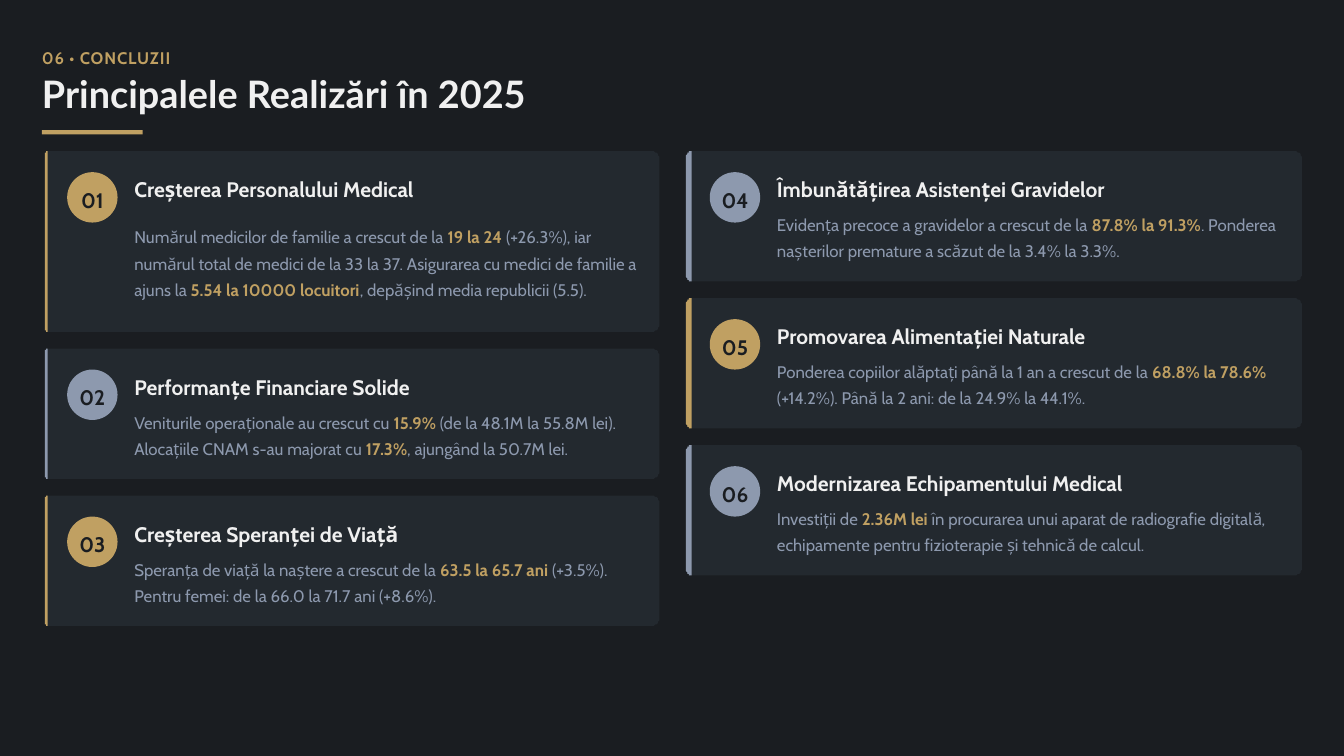
from dataclasses import dataclass
from math import cos, radians, sin

from lxml.etree import SubElement
from pptx import Presentation
from pptx.dml.color import RGBColor
from pptx.enum.shapes import MSO_SHAPE as Preset
from pptx.enum.text import MSO_ANCHOR as Anchor, PP_ALIGN as Align
from pptx.oxml.ns import qn
from pptx.shapes.autoshape import Shape
from pptx.slide import Slide
from pptx.text.text import TextFrame
from pptx.util import Pt

COLORS = {
    "background": "1A1D21",
    "panel": "4A5C6A",
    "gold": "C0A062",
    "steel": "8D99AE",
    "white": "F0F0F0",
}
COLUMN_LEFTS = (31.5, 490.5)
COLUMN_TOP = 108
CARD_WIDTH = 439.5
CARD_GAP = 12
BAR_WIDTH = 3
CIRCLE_SIZE = 36
PADDING_TOP = 15
TEXT_LEFT = 64.5
BODY_TOP = 42


@dataclass(frozen=True)
class Box:
    left: float
    top: float
    width: float
    height: float


@dataclass(frozen=True)
class Style:
    size: float
    color: str
    font: str = "Cabin"
    bold: bool = True
    tracking: float = 0


@dataclass(frozen=True)
class Card:
    heading: str
    accent: str
    body: tuple[str, ...]
    height: float = 93


LABEL = Style(12, "gold", tracking=0.6)
TITLE = Style(27, "white", font="Lato")
NUMBER = Style(15, "background")
HEADING = Style(15, "white")
BODY = Style(12, "steel", bold=False)
HIGHLIGHT = Style(12, "gold")

COLUMNS = (
    (
        Card("Creșterea Personalului Medical", "gold", (
            "Numărul medicilor de familie a crescut de la ", "19 la 24",
            " (+26.3%), iar numărul total de medici de la 33 la 37. "
            "Asigurarea cu medici de familie a ajuns la ",
            "5.54 la 10000 locuitori", ", depășind media republicii (5.5)."), 129),
        Card("Performanțe Financiare Solide", "steel", (
            "Veniturile operaționale au crescut cu ", "15.9%",
            " (de la 48.1M la 55.8M lei). Alocațiile CNAM s-au majorat cu ",
            "17.3%", ", ajungând la 50.7M lei.")),
        Card("Creșterea Speranței de Viață", "gold", (
            "Speranța de viață la naștere a crescut de la ", "63.5 la 65.7 ani",
            " (+3.5%). Pentru femei: de la 66.0 la 71.7 ani (+8.6%).")),
    ),
    (
        Card("Îmbunătățirea Asistenței Gravidelor", "steel", (
            "Evidența precoce a gravidelor a crescut de la ", "87.8% la 91.3%",
            ". Ponderea nașterilor premature a scăzut de la 3.4% la 3.3%.")),
        Card("Promovarea Alimentației Naturale", "gold", (
            "Ponderea copiilor alăptați până la 1 an a crescut de la ", "68.8% la 78.6%",
            " (+14.2%). Până la 2 ani: de la 24.9% la 44.1%.")),
        Card("Modernizarea Echipamentului Medical", "steel", (
            "Investiții de ", "2.36M lei",
            " în procurarea unui aparat de radiografie digitală, "
            "echipamente pentru fizioterapie și tehnică de calcul.")),
    ),
)


def rgb(name: str) -> RGBColor:
    """Return the named colour."""
    return RGBColor.from_string(COLORS[name])


def place(shape: Shape, box: Box) -> None:
    """Move and size a shape."""
    shape.left, shape.top = Pt(box.left), Pt(box.top)
    shape.width, shape.height = Pt(box.width), Pt(box.height)


def paint(shape: Shape, color: str) -> None:
    """Give a shape a plain fill with no line or shadow."""
    shape.shadow.inherit = False
    shape.fill.solid()
    shape.fill.fore_color.rgb = rgb(color)
    shape.line.fill.background()


def write(frame: TextFrame, spans: list[tuple[str, Style]], spacing: float,
          align: Align = Align.LEFT) -> None:
    """Fill a text frame with one paragraph of styled runs."""
    frame.word_wrap = True
    frame.vertical_anchor = Anchor.MIDDLE
    frame.margin_left = frame.margin_right = frame.margin_top = frame.margin_bottom = 0
    paragraph = frame.paragraphs[0]
    paragraph.alignment = align
    paragraph.line_spacing = spacing
    for text, style in spans:
        run = paragraph.add_run()
        run.text = text
        run.font.name = style.font
        run.font.size = Pt(style.size)
        run.font.bold = style.bold
        run.font.color.rgb = rgb(style.color)
        if style.tracking:
            run._r.get_or_add_rPr().set("spc", str(round(style.tracking * 100)))


def add_text(slide: Slide, box: Box, spans: list[tuple[str, Style]], spacing: float,
             align: Align = Align.LEFT) -> None:
    """Add a text box."""
    shape = slide.shapes.add_textbox(0, 0, 0, 0)
    place(shape, box)
    write(shape.text_frame, spans, spacing, align)


def add_preset(slide: Slide, preset: Preset, box: Box, color: str) -> None:
    """Add a filled preset shape."""
    shape = slide.shapes.add_shape(preset, 0, 0, 0, 0)
    place(shape, box)
    paint(shape, color)


def add_rounded(slide: Slide, box: Box, left_radius: float, right_radius: float,
                color: str) -> Shape:
    """Add a rectangle whose left and right corners differ in radius."""
    right, bottom = box.left + box.width, box.top + box.height
    corners = (
        (box.left + left_radius, box.top + left_radius, left_radius, 180),
        (right - right_radius, box.top + right_radius, right_radius, 270),
        (right - right_radius, bottom - right_radius, right_radius, 0),
        (box.left + left_radius, bottom - left_radius, left_radius, 90),
    )
    points = [
        (x + radius * cos(radians(start + step)), y + radius * sin(radians(start + step)))
        for x, y, radius, start in corners
        for step in (range(0, 91, 10) if radius else (0,))
    ]
    builder = slide.shapes.build_freeform(*points[0], scale=Pt(1))
    builder.add_line_segments(points[1:], close=True)
    shape = builder.convert_to_shape()
    paint(shape, color)
    return shape


def add_card(slide: Slide, card: Card, number: int, left: float, top: float) -> None:
    """Draw one numbered achievement."""
    panel = add_rounded(slide, Box(left, top, CARD_WIDTH, card.height), 3, 6, "panel")
    color = panel.fill._xPr.find(qn("a:solidFill"))[0]
    SubElement(color, qn("a:alpha")).set("val", "20000")
    add_rounded(slide, Box(left, top, BAR_WIDTH, card.height), BAR_WIDTH, 0, card.accent)
    row = top + PADDING_TOP
    add_preset(slide, Preset.OVAL, Box(left + 16.5, row, CIRCLE_SIZE, CIRCLE_SIZE), card.accent)
    add_text(slide, Box(left + 12.75, row, 43.5, CIRCLE_SIZE), [(f"{number:02}", NUMBER)],
             1.2, Align.CENTER)
    add_text(slide, Box(left + TEXT_LEFT, row, 367, 21), [(card.heading, HEADING)], 1.2)
    spans = [(text, HIGHLIGHT if index % 2 else BODY) for index, text in enumerate(card.body)]
    body_height = card.height - BODY_TOP - PADDING_TOP
    add_text(slide, Box(left + TEXT_LEFT, top + BODY_TOP, 366, body_height), spans, 1.3)


def main() -> None:
    """Build the conclusions slide."""
    presentation = Presentation()
    presentation.slide_width, presentation.slide_height = Pt(960), Pt(540)
    slide = presentation.slides.add_slide(presentation.slide_layouts[5])
    slide.background.fill.solid()
    slide.background.fill.fore_color.rgb = rgb("background")
    add_text(slide, Box(30, 30, 906, 18), [("06 • CONCLUZII", LABEL)], 1.3)
    place(slide.shapes.title, Box(30, 54, 914, 30))
    write(slide.shapes.title.text_frame, [("Principalele Realizări în 2025", TITLE)], 0.9)
    add_preset(slide, Preset.RECTANGLE, Box(30, 93, 72, 3), "gold")
    number = 0
    for left, cards in zip(COLUMN_LEFTS, COLUMNS):
        top = COLUMN_TOP
        for card in cards:
            number += 1
            add_card(slide, card, number, left, top)
            top += card.height + CARD_GAP
    presentation.save("out.pptx")


if __name__ == "__main__":
    main()
